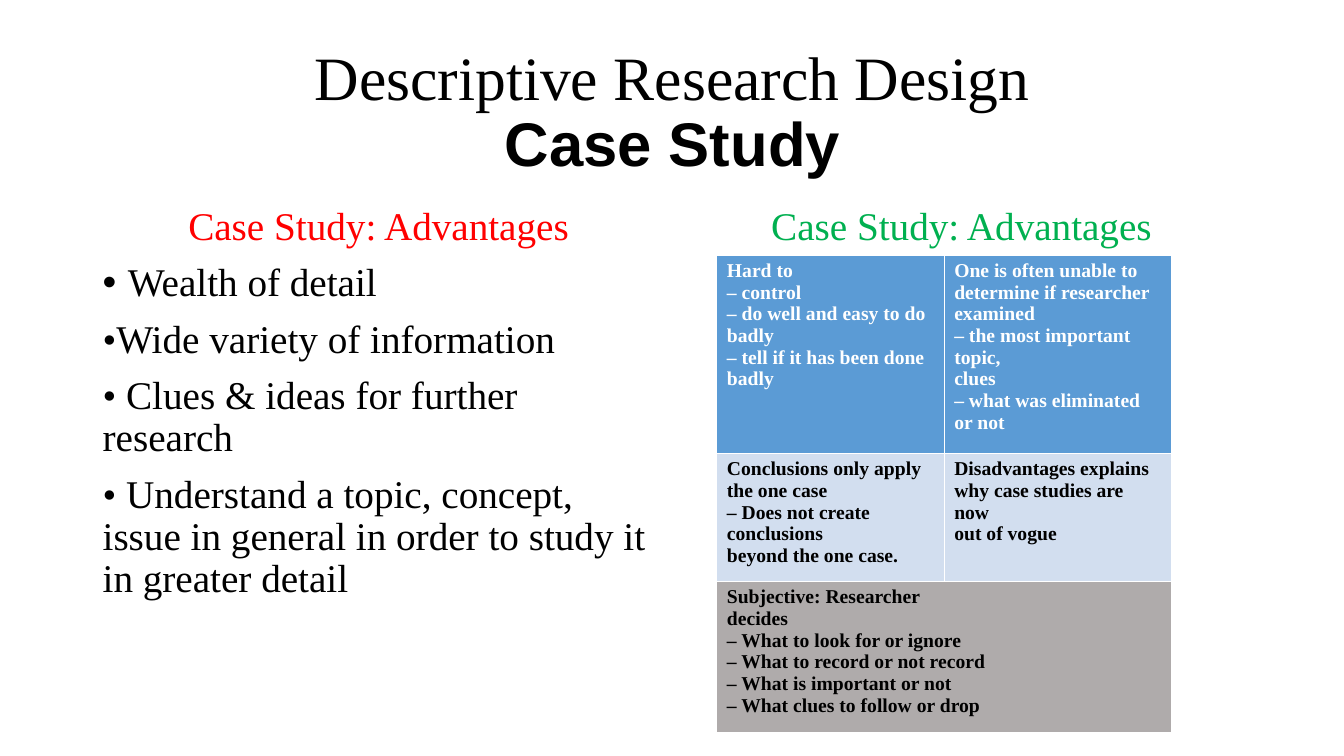
import pptx
import pptx.util
import pptx.dml.color
import pptx.enum.text
import lxml.etree
from pptx.util import Inches

COLORS = {"black": "000000", "white": "FFFFFF", "red": "FF0000", "green": "00B050",
          "header": "5B9BD5", "band": "D2DEEF", "gray": "AFABAB"}
SERIF = "Times New Roman"
CENTER = pptx.enum.text.PP_ALIGN.CENTER
LEFT = pptx.enum.text.PP_ALIGN.LEFT


def style_font(font, color, **formats):
    for attribute, value in formats.items():
        setattr(font, attribute, value)
    font.color.rgb = pptx.dml.color.RGBColor.from_string(COLORS[color])


def add_frame(left, top, width, height):
    frame = slide.shapes.add_textbox(Inches(left), Inches(top), Inches(width), Inches(height)).text_frame
    frame.word_wrap = True
    return frame


deck = pptx.Presentation()
deck.slide_width, deck.slide_height = Inches(13.33), Inches(7.5)
slide = deck.slides.add_slide(deck.slide_layouts[6])

title = add_frame(0.92, 0.4, 11.5, 1.45)
title.vertical_anchor = pptx.enum.text.MSO_ANCHOR.MIDDLE
heading = title.paragraphs[0]
heading.alignment = CENTER
heading.line_spacing = 0.9
topic = heading.add_run()
topic.text = "Descriptive Research Design"
style_font(topic.font, "black", name=SERIF, size=pptx.util.Pt(44))
heading.add_line_break()
method = heading.add_run()
method.text = "Case Study"
style_font(method.font, "black", name="Arial", size=pptx.util.Pt(44), bold=True)

columns = [
    (0.92, "red", ["Case Study: Advantages",
                   "Wealth of detail",
                   "•Wide variety of information",
                   "• Clues & ideas for further research",
                   "• Understand a topic, concept, issue in general in order to study it in greater detail"]),
    (6.75, "green", ["Case Study: Advantages "]),
]
for left, heading_color, lines in columns:
    column = add_frame(left, 2, 5.67, 4.76)
    for index, line in enumerate(lines):
        point = column.paragraphs[0] if index == 0 else column.add_paragraph()
        point.text = line
        point.line_spacing = 0.9
        point.alignment = LEFT if index else CENTER
        if index:
            point.space_before = pptx.util.Pt(10)
        if index == 1:
            properties = point._p.get_or_add_pPr()
            properties.set("marL", str(Inches(0.25)))
            properties.set("indent", str(Inches(-0.25)))
            for tag, key, value in [("buFont", "typeface", "Arial"), ("buChar", "char", "•")]:
                lxml.etree.SubElement(properties, pptx.oxml.ns.qn("a:" + tag)).set(key, value)
        style_font(point.font, "black" if index else heading_color, name=SERIF, size=pptx.util.Pt(28))

drawbacks = [
    (1.81, "header", "white", [
        ["Hard to", "– control", "– do well and easy to do badly", "– tell if it has been done badly"],
        ["One is often unable to", "determine if researcher", "examined",
         "– the most important topic,", "clues", "– what was eliminated or not"]]),
    (1.18, "band", "black", [
        ["Conclusions only apply the one case", "– Does not create conclusions", "beyond the one case."],
        ["Disadvantages explains", "why case studies are now", "out of vogue"]]),
    (1.39, "gray", "black", [
        ["Subjective: Researcher", "decides", "– What to look for or ignore",
         "– What to record or not record", "– What is important or not", "– What clues to follow or drop"]]),
]
grid = slide.shapes.add_table(3, 2, Inches(7.11), Inches(2.53), Inches(4.51), Inches(4.38)).table
grid.cell(2, 0).merge(grid.cell(2, 1))
for row, (height, fill, color, entries) in enumerate(drawbacks):
    grid.rows[row].height = Inches(height)
    for col, lines in enumerate(entries):
        cell = grid.cell(row, col)
        cell.fill.solid()
        cell.fill.fore_color.rgb = pptx.dml.color.RGBColor.from_string(COLORS[fill])
        cell.text = "\n".join(lines)
        for paragraph in cell.text_frame.paragraphs:
            style_font(paragraph.font, color, name=SERIF, size=pptx.util.Pt(14), bold=True)

deck.save("out.pptx")
